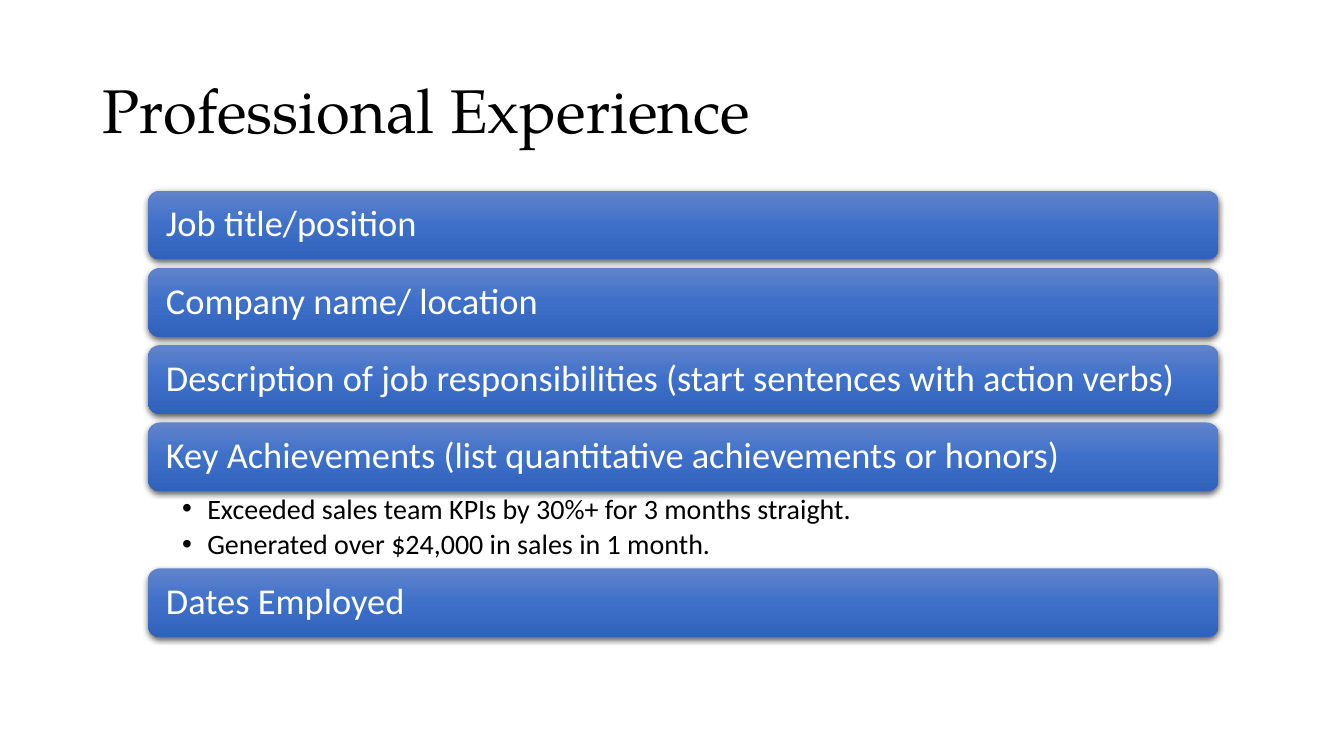
from lxml.etree import SubElement
from pptx import Presentation
from pptx.dml.color import RGBColor
from pptx.enum.shapes import MSO_SHAPE
from pptx.enum.text import MSO_ANCHOR, MSO_AUTO_SIZE, PP_ALIGN
from pptx.oxml import parse_xml
from pptx.oxml.ns import nsdecls, qn
from pptx.util import Pt

TITLE = "Professional Experience"
SECTIONS = [
    ("Job title/position", []),
    ("Company name/ location", []),
    ("Description of job responsibilities (start sentences with action verbs)", []),
    ("Key Achievements (list quantitative achievements or honors)", [
        "Exceeded sales team KPIs by 30%+ for 3 months straight.",
        "Generated over $24,000 in sales in 1 month.",
    ]),
    ("Dates Employed", []),
]
COLORS = {"text": "000000", "bar_text": "FFFFFF", "shadow": "000000",
          "bar_top": "6183CB", "bar_middle": "3E70CA", "bar_bottom": "3062BB"}
LEFT, TOP, WIDTH = 105.8, 136.2, 764.6
BAR_HEIGHT, GAP, LIST_HEIGHT = 49.1, 6.1, 55.1


def place(shape, left, top, width, height):
    shape.left, shape.top = Pt(left), Pt(top)
    shape.width, shape.height = Pt(width), Pt(height)


def set_frame(frame, anchor, insets):
    """Insets are left, top, right and bottom."""
    frame.word_wrap = True
    frame.auto_size = MSO_AUTO_SIZE.NONE
    frame.vertical_anchor = anchor
    (frame.margin_left, frame.margin_top,
     frame.margin_right, frame.margin_bottom) = map(Pt, insets)


def style(para, font_name, size, color, space_after=0):
    para.alignment = PP_ALIGN.LEFT
    para.line_spacing = 0.9
    para.space_before = Pt(0)
    para.space_after = Pt(space_after)
    for span in para.runs:
        span.font.name = font_name
        span.font.size = Pt(size)
        span.font.color.rgb = RGBColor.from_string(COLORS[color])


def add_bar(page, label, top):
    bar = page.shapes.add_shape(MSO_SHAPE.ROUNDED_RECTANGLE, Pt(LEFT), Pt(top),
                                Pt(WIDTH), Pt(BAR_HEIGHT))
    bar.adjustments[0] = 0.17
    stops = "".join(
        f'<a:gs pos="{position}"><a:srgbClr val="{COLORS[name]}"/></a:gs>'
        for position, name in ((0, "bar_top"), (50000, "bar_middle"), (100000, "bar_bottom")))
    properties = bar.element.spPr
    properties.append(parse_xml(
        f'<a:gradFill {nsdecls("a")} rotWithShape="1"><a:gsLst>{stops}</a:gsLst>'
        '<a:lin ang="5400000" scaled="0"/></a:gradFill>'))
    bar.line.fill.background()
    properties.append(parse_xml(
        f'<a:effectLst {nsdecls("a")}><a:outerShdw blurRad="{Pt(4.5)}" dist="{Pt(1.5)}" '
        f'dir="5400000" algn="ctr" rotWithShape="0"><a:srgbClr val="{COLORS["shadow"]}">'
        '<a:alpha val="63000"/></a:srgbClr></a:outerShdw></a:effectLst>'))
    set_frame(bar.text_frame, MSO_ANCHOR.MIDDLE, (10.3, 7.8, 10.3, 7.8))
    bar.text_frame.text = label
    style(bar.text_frame.paragraphs[0], "Calibri", 26, "bar_text")


def fill_list(body, items, top):
    place(body, LEFT, top, WIDTH, LIST_HEIGHT)
    set_frame(body.text_frame, MSO_ANCHOR.TOP, (24.3, 2.6, 14.4, 2.6))
    body.text_frame.text = "\n".join(items)
    for para in body.text_frame.paragraphs:
        para.level = 1
        properties = para._p.get_or_add_pPr()
        properties.set("marL", str(Pt(18)))
        properties.set("indent", str(-Pt(18)))
        SubElement(properties, qn("a:buFont")).set("typeface", "Arial")
        SubElement(properties, qn("a:buChar")).set("char", "•")
        style(para, "Calibri", 20, "text", space_after=4)


def main():
    deck = Presentation()
    deck.slide_width, deck.slide_height = Pt(960), Pt(540)
    page = deck.slides.add_slide(deck.slide_layouts[1])
    title, body = page.placeholders
    place(title, 66, 28.8, 828, 104.4)
    set_frame(title.text_frame, MSO_ANCHOR.MIDDLE, (7.2, 3.6, 7.2, 3.6))
    title.text_frame.text = TITLE
    style(title.text_frame.paragraphs[0], "TeX Gyre Pagella", 44, "text")

    top = TOP
    for label, items in SECTIONS:
        add_bar(page, label, top)
        top += BAR_HEIGHT
        if items:
            fill_list(body, items, top)
            top += LIST_HEIGHT
        else:
            top += GAP
    deck.save("out.pptx")


if __name__ == "__main__":
    main()
